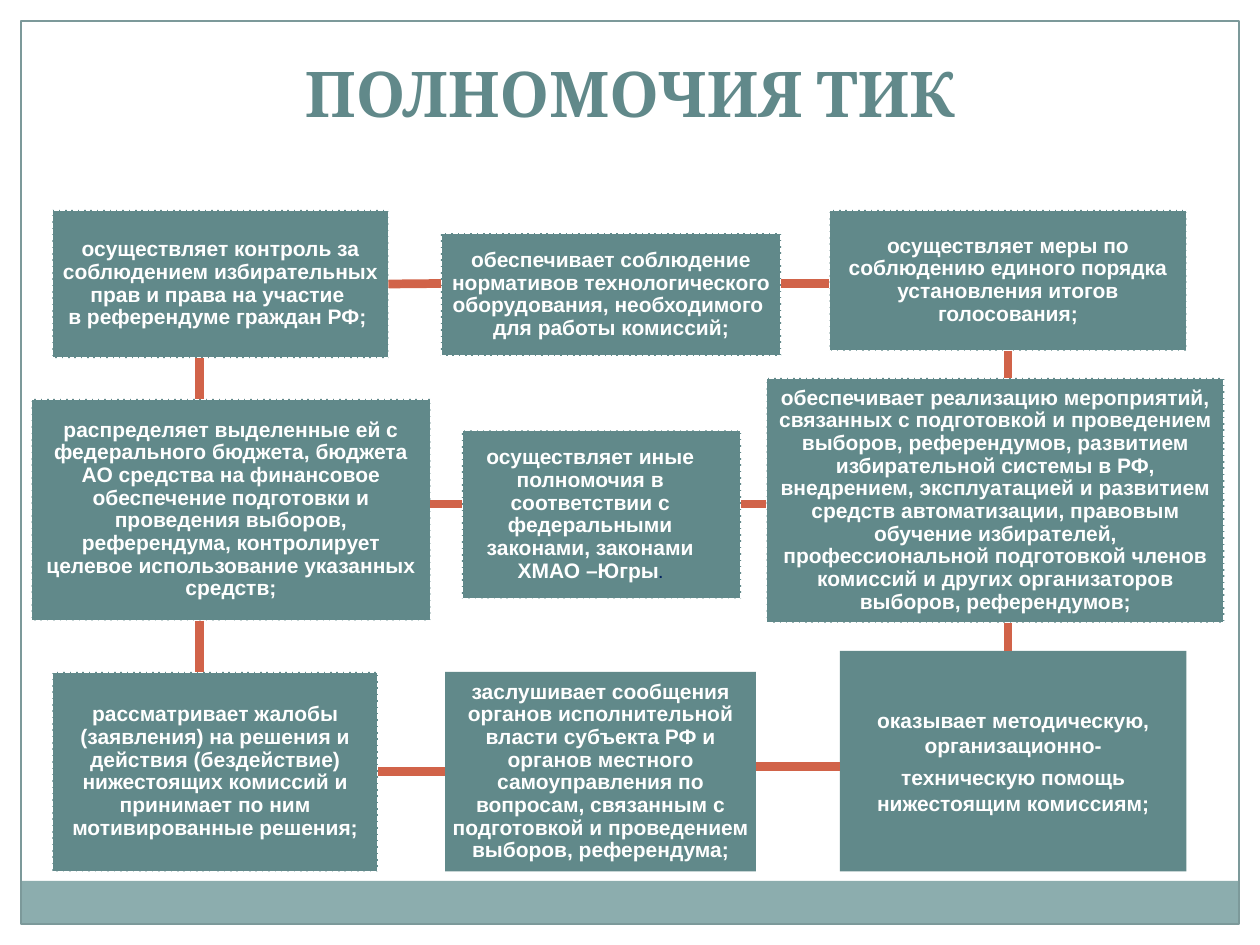
from lxml import etree
from pptx import Presentation
from pptx import util as u
from pptx.dml.color import RGBColor
from pptx.enum import dml, shapes, text
from pptx.oxml.ns import qn

COLS, ROWS = 120, 90
TEAL, BAND, FRAME, RUST = "61898A", "8CADAE", "7C999A", "D16349"
WHITE, NAVY = "FFFFFF", "002060"

prs = Presentation()
prs.slide_width, prs.slide_height = u.Inches(10), u.Inches(7.5)
CELL = prs.slide_width / COLS

# name: (column, row, columns, rows), dashed edge, insets left and right, text
BOXES = {
    "control": ((5, 20, 32, 14.1), True, (0.05, 0.05), [
        "осуществляет контроль за соблюдением избирательных прав и права на участие \n"
        "в референдуме граждан РФ; "]),
    "norms": ((42, 22.2, 32.4, 11.7), True, (0.05, 0.05), [
        "обеспечивает соблюдение нормативов технологического оборудования, необходимого \n"
        "для работы комиссий;"]),
    "results": ((79, 20, 34, 13.4), True, (0.05, 0.05), [
        "осуществляет меры по соблюдению единого порядка установления итогов голосования;"]),
    "funds": ((3, 38, 38, 21.1), True, (0.05, 0.05), [
        "распределяет выделенные ей с федерального бюджета, бюджета АО средства на "
        "финансовое обеспечение подготовки и проведения выборов, референдума, "
        "контролирует целевое использование указанных средств;"]),
    "other": ((44, 41, 26.6, 16), True, (0.03, 0.21), [
        "осуществляет иные полномочия в соответствии с федеральными законами, "
        "законами ХМАО –Югры"]),
    "events": ((73, 36, 43.6, 23.3), True, (0.05, 0.05), [
        "обеспечивает реализацию мероприятий, связанных с подготовкой и проведением "
        "выборов, референдумов, развитием избирательной системы в РФ, внедрением, "
        "эксплуатацией и развитием средств автоматизации, правовым обучение "
        "избирателей, профессиональной подготовкой членов комиссий и других "
        "организаторов выборов, референдумов;"]),
    "claims": ((5, 64, 31, 19), True, (0.03, 0.03), [
        "рассматривает жалобы (заявления) на решения и действия (бездействие) "
        "нижестоящих комиссий и принимает по ним мотивированные решения;"]),
    "reports": ((42.4, 64, 29.6, 19), False, (0.03, 0.03), [
        "заслушивает сообщения органов исполнительной власти субъекта РФ и органов "
        "местного самоуправления по вопросам, связанным с подготовкой и проведением "
        "выборов, референдума;"]),
    "help": ((80, 62, 33, 21), False, (0.03, 0.03), [
        "оказывает методическую, организационно-",
        "техническую помощь нижестоящим комиссиям;"]),
}

# first box, second box, row (across) or column (down) of the link
ACROSS = [("control", "norms", 27), ("norms", "results", 27),
          ("funds", "other", 48), ("other", "events", 48),
          ("claims", "reports", 73.5), ("reports", "help", 73)]
DOWN = [("control", "funds", 19), ("funds", "claims", 19),
        ("results", "events", 96), ("events", "help", 96)]


def color(code):
    return RGBColor.from_string(code)


def grid(*cells):
    return [u.Emu(round(n * CELL)) for n in cells]


def style(run, size=12, font="Arial", ink=WHITE, bold=True):
    run.font.size, run.font.name, run.font.bold = u.Pt(size), font, bold
    run.font.color.rgb = color(ink)


def write(para, words, lead=None, after=0, **form):
    para.text = words
    para.alignment = text.PP_ALIGN.CENTER
    para.line_spacing, para.space_after = lead, u.Pt(after)
    para.space_before = u.Pt(0)
    for run in para.runs:
        style(run, **form)


def rect(slide, box, fill=None, line=None, width=0.75):
    shape = slide.shapes.add_shape(shapes.MSO_SHAPE.RECTANGLE, *grid(*box))
    shape.shadow.inherit = False
    if fill:
        shape.fill.solid()
        shape.fill.fore_color.rgb = color(fill)
    else:
        shape.fill.background()
    if line:
        shape.line.color.rgb = color(line)
        shape.line.width = u.Pt(width)
    else:
        shape.line.fill.background()
    return shape


def card(slide, box, dashed, pads, paras):
    shape = rect(slide, box, TEAL, WHITE if dashed else None, 0.9)
    if dashed:
        shape.line.dash_style = dml.MSO_LINE.SQUARE_DOT
    frame = shape.text_frame
    frame.word_wrap = True
    frame.vertical_anchor = text.MSO_ANCHOR.MIDDLE
    frame.margin_left, frame.margin_right = map(u.Inches, pads)
    frame.margin_top = frame.margin_bottom = u.Inches(pads[0])
    for i, words in enumerate(paras):
        para = frame.add_paragraph() if i else frame.paragraphs[0]
        write(para, words, lead=0.9 if len(paras) == 1 else 1, after=4.2)
    return shape


def link(slide, cards, first, last, at, down):
    """Join facing sides at a given row or column, gluing ends at a side's middle."""
    axis = 1 if down else 0
    a, b = BOXES[first][0], BOXES[last][0]
    start, end = a[axis] + a[axis + 2], b[axis]
    ends = (at, start, at, end) if down else (start, at, end, at)
    line = slide.shapes.add_connector(shapes.MSO_CONNECTOR.STRAIGHT, *grid(*ends))
    line.line.color.rgb = color(RUST)
    line.line.width = u.Pt(5)
    etree.SubElement(line.element.spPr, qn("a:effectLst"))
    out, into = (2, 0) if down else (3, 1)
    for name, join, side in ((first, line.begin_connect, out),
                             (last, line.end_connect, into)):
        box = BOXES[name][0]
        if abs(box[1 - axis] + box[3 - axis] / 2 - at) < 0.1:
            join(cards[name], side)


def border(slide):
    rect(slide, (2, 83.9, 116, 4.1), BAND)
    rect(slide, (2, 2, 116, 86), line=FRAME)


def head(slide, box, words):
    title = slide.shapes.title
    title.left, title.top, title.width, title.height = grid(*box)
    title.text_frame.vertical_anchor = text.MSO_ANCHOR.BOTTOM
    title.text_frame.auto_size = text.MSO_AUTO_SIZE.NONE
    write(title.text_frame.paragraphs[0], words, size=36, font="Cambria", ink=TEAL)


def chart(slide):
    cards = {name: card(slide, *parts) for name, parts in BOXES.items()}
    stop = cards["other"].text_frame.paragraphs[0].add_run()
    stop.text = "."
    style(stop, size=8, ink=NAVY)
    for links, down in ((ACROSS, False), (DOWN, True)):
        for first, last, at in links:
            link(slide, cards, first, last, at, down)


def main():
    slide = prs.slides.add_slide(prs.slide_layouts[5])
    border(slide)
    head(slide, (3, 3, 114, 10), "ПОЛНОМОЧИЯ ТИК")
    chart(slide)
    prs.save("out.pptx")


if __name__ == "__main__":
    main()
